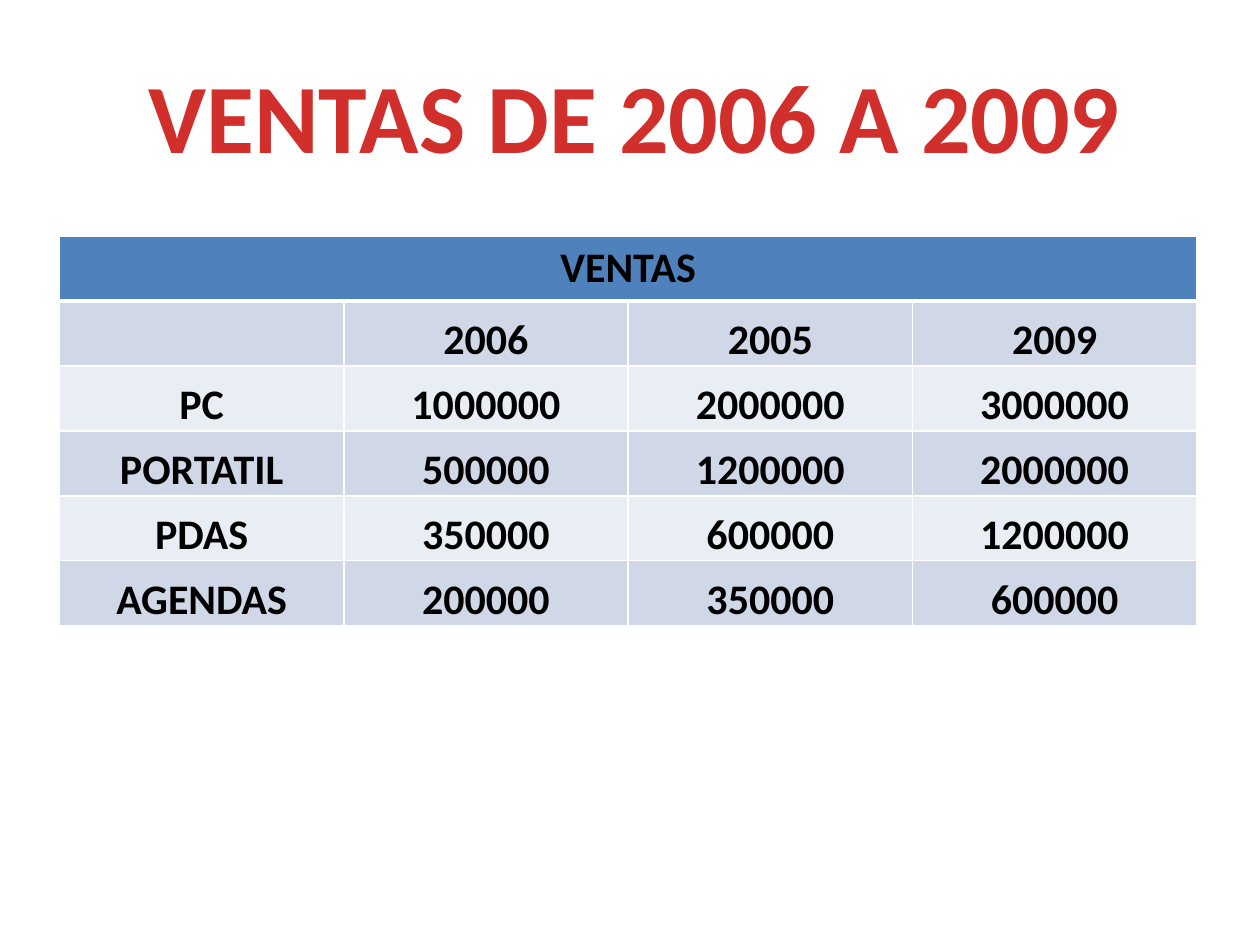
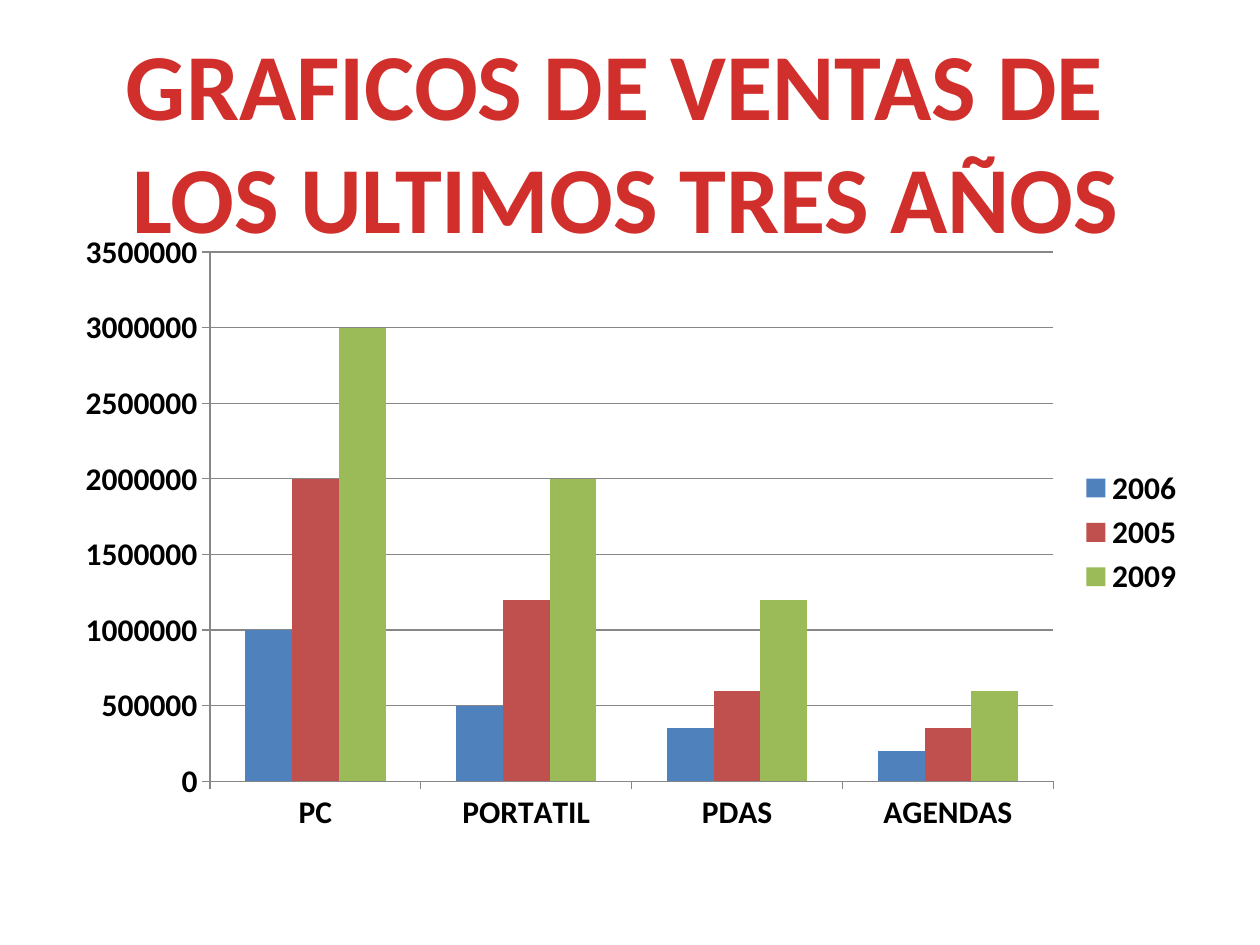
"""Builds two slides on sales: a table by product and year, and its column chart."""
from copy import deepcopy
from dataclasses import dataclass

from lxml import etree
from pptx import Presentation
from pptx.chart.data import CategoryChartData
from pptx.dml.color import RGBColor
from pptx.enum.chart import XL_CHART_TYPE, XL_LEGEND_POSITION, XL_TICK_MARK
from pptx.enum.text import MSO_ANCHOR, MSO_AUTO_SIZE, PP_ALIGN
from pptx.oxml.ns import qn
from pptx.util import Pt

CENTER = PP_ALIGN.CENTER
MIDDLE = MSO_ANCHOR.MIDDLE
BOTTOM = MSO_ANCHOR.BOTTOM
GROW = MSO_AUTO_SIZE.SHAPE_TO_FIT_TEXT
COLUMNS = XL_CHART_TYPE.COLUMN_CLUSTERED
LEGEND_RIGHT = XL_LEGEND_POSITION.RIGHT
TICK_OUTSIDE = XL_TICK_MARK.OUTSIDE
TITLE_ONLY = 5

YEARS = ["2006", "2005", "2009"]
SALES = {
    "PC": [1000000, 2000000, 3000000],
    "PORTATIL": [500000, 1200000, 2000000],
    "PDAS": [350000, 600000, 1200000],
    "AGENDAS": [200000, 350000, 600000],
}


@dataclass(frozen=True)
class Theme:
    """Colours, font and type sizes of the deck."""
    font: str = "Calibri"
    background: str = "FFFFFF"
    text: str = "000000"
    title_stops: tuple = ((0, "FC7C7A"), (0.75, "D02F2C"), (1, "C70500"))
    header: str = "4F81BD"
    bands: tuple = ("D0D8E8", "E9EDF4")
    border: str = "FFFFFF"
    axis: str = "878787"
    series: tuple = ("4F81BD", "C0504D", "9BBB59")
    table_title_size: int = 56
    chart_title_size: int = 54
    cell_size: int = 24
    chart_size: int = 18


class SlideBuilder:
    """Holds the theme and the current slide, and draws each kind of element."""

    def __init__(self, deck, theme):
        self.deck = deck
        self.theme = theme
        self.page = None

    def new_page(self):
        """Start a title-only slide on the theme background."""
        self.page = self.deck.slides.add_slide(self.deck.slide_layouts[TITLE_ONLY])
        fill = self.page.background.fill
        fill.solid()
        fill.fore_color.rgb = RGBColor.from_string(self.theme.background)

    def style_font(self, font, size, color=None):
        """Give a font the theme face in bold, and a plain colour if one is named."""
        font.name = self.theme.font
        font.size = Pt(size)
        font.bold = True
        if color:
            font.color.rgb = RGBColor.from_string(color)

    def title(self, text, size, left, top, width, height, wrap=True):
        """Place the title and colour it with the theme gradient."""
        box = self.page.shapes.title
        box.left, box.top, box.width, box.height = map(Pt, (left, top, width, height))
        frame = box.text_frame
        frame.text = text
        frame.word_wrap = wrap
        frame.auto_size = GROW
        frame.vertical_anchor = MIDDLE
        for para in frame.paragraphs:
            para.alignment = CENTER
            for span in para.runs:
                self.style_font(span.font, size)
                self.gradient(span)

    def gradient(self, span):
        """Fill a run with the title gradient, from top to bottom."""
        fill = span.font.fill
        fill.gradient()
        fill.gradient_angle = 270
        stops = span._r.xpath(".//a:gsLst")[0]
        stops.append(deepcopy(stops[0]))
        for stop, (position, color) in zip(fill.gradient_stops, self.theme.title_stops):
            stop.position = position
            stop.color.rgb = RGBColor.from_string(color)

    def border(self, cell, top=1, bottom=1):
        """Draw the four borders of a cell."""
        properties = cell._tc.get_or_add_tcPr()
        for side, weight in (("L", 1), ("R", 1), ("T", top), ("B", bottom)):
            line = etree.SubElement(properties, qn(f"a:ln{side}"), w=str(Pt(weight)))
            solid = etree.SubElement(line, qn("a:solidFill"))
            etree.SubElement(solid, qn("a:srgbClr"), val=self.theme.border)

    def fill_cell(self, cell, text, color):
        """Set the fill and the centred text of a cell."""
        cell.fill.solid()
        cell.fill.fore_color.rgb = RGBColor.from_string(color)
        cell.text_frame.text = text
        para = cell.text_frame.paragraphs[0]
        para.alignment = CENTER
        for span in para.runs:
            self.style_font(span.font, self.theme.cell_size, self.theme.text)

    def table(self, heading, rows, left, top, width, height):
        """Draw a banded table under one merged heading row."""
        row_count, column_count = len(rows) + 1, len(rows[0])
        table = self.page.shapes.add_table(
            row_count, column_count, Pt(left), Pt(top), Pt(width), Pt(height)).table
        for column in table.columns:
            column.width = Pt(width / column_count)
        for row in table.rows:
            row.height = Pt(height / row_count)
        for cell in table.rows[0].cells:
            self.border(cell, bottom=3)
        table.cell(0, 0).merge(table.cell(0, column_count - 1))
        self.fill_cell(table.cell(0, 0), heading, self.theme.header)
        for row_index, row in enumerate(rows):
            for column_index, text in enumerate(row):
                cell = table.cell(row_index + 1, column_index)
                self.border(cell, top=1 if row_index else 3)
                self.fill_cell(cell, text, self.theme.bands[row_index % 2])
                if text:
                    cell.vertical_anchor = BOTTOM
                    cell.margin_left = cell.margin_right = cell.margin_top = Pt(0.75)
                    cell.margin_bottom = 0

    def column_chart(self, categories, series, left, top, width, height):
        """Draw a clustered column chart with its legend on the right."""
        data = CategoryChartData(number_format="General")
        data.categories = categories
        for name, values in series:
            data.add_series(name, values)
        chart = self.page.shapes.add_chart(
            COLUMNS, Pt(left), Pt(top), Pt(width), Pt(height), data).chart
        self.style_font(chart.font, self.theme.chart_size, self.theme.text)
        chart.has_title = False
        chart.has_legend = True
        chart.legend.position = LEGEND_RIGHT
        chart.legend.include_in_layout = False
        chart.value_axis.has_major_gridlines = True
        for axis in (chart.category_axis, chart.value_axis):
            axis.major_tick_mark = TICK_OUTSIDE
            self.axis_line(axis.format.line)
        self.axis_line(chart.value_axis.major_gridlines.format.line)
        plot = chart.plots[0]
        plot.gap_width = 150
        plot.vary_by_categories = False
        for columns, color in zip(plot.series, self.theme.series):
            columns.format.fill.solid()
            columns.format.fill.fore_color.rgb = RGBColor.from_string(color)

    def axis_line(self, line):
        """Style an axis or a gridline."""
        line.width = Pt(0.75)
        line.color.rgb = RGBColor.from_string(self.theme.axis)


def main():
    """Build both slides and save the deck."""
    deck = Presentation()
    deck.slide_width, deck.slide_height = Pt(720), Pt(540)
    theme = Theme()
    builder = SlideBuilder(deck, theme)

    builder.new_page()
    builder.title("VENTAS DE 2006 A 2009", theme.table_title_size, 39.6, 28, 646.5, 75)
    rows = [["", *YEARS]]
    rows += [[product, *map(str, values)] for product, values in SALES.items()]
    builder.table("VENTAS", rows, 34, 135, 650, 222.6)

    builder.new_page()
    builder.title("GRAFICOS DE VENTAS DE \nLOS ULTIMOS TRES AÑOS", theme.chart_title_size,
                  62, 10.5, 591, 138, wrap=False)
    builder.column_chart(list(SALES), zip(YEARS, zip(*SALES.values())), 36, 126, 648, 356.5)

    deck.save("out.pptx")


if __name__ == "__main__":
    main()
